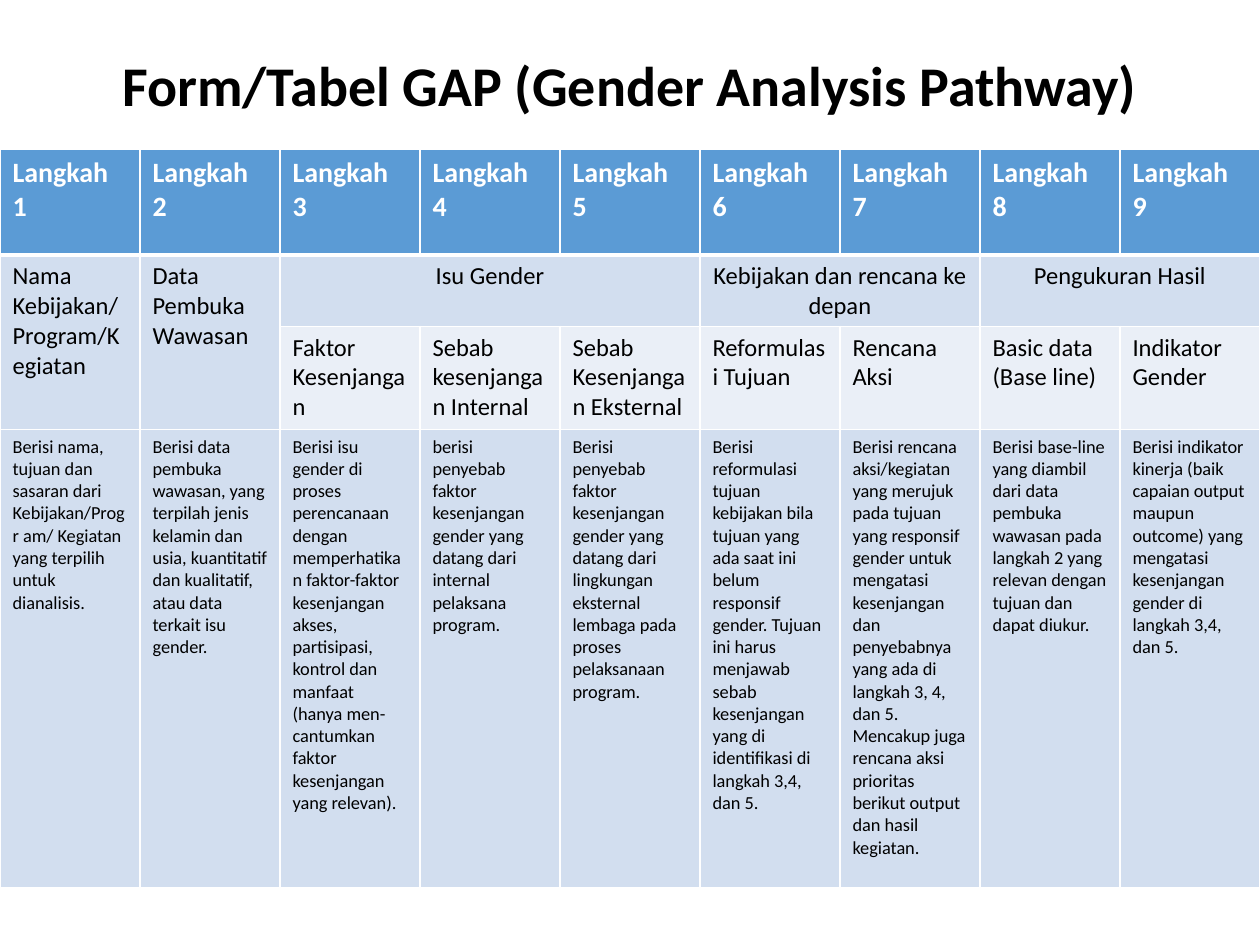
import pptx
import pptx.util
import pptx.dml.color
import pptx.enum.text
import pptx.oxml
import pptx.oxml.ns

RGB = pptx.dml.color.RGBColor
BLACK = RGB(0x00, 0x00, 0x00)
WHITE = RGB(0xFF, 0xFF, 0xFF)
BLUE = RGB(0x5B, 0x9B, 0xD5)
MIST = RGB(0xD2, 0xDE, 0xEF)
PALE = RGB(0xEA, 0xEF, 0xF7)

ALIGN = pptx.enum.text.PP_ALIGN
FONT = "Calibri"
STEPS = 9
ROWS = [106, 71, 103, 458]

# Group label, first column, rows spanned, columns spanned
GROUPS = [
    ("Nama Kebijakan/Program/Kegiatan", 0, 2, 1),
    ("Data Pembuka Wawasan", 1, 2, 1),
    ("Isu Gender", 2, 1, 3),
    ("Kebijakan dan rencana ke depan", 5, 1, 2),
    ("Pengukuran Hasil", 7, 1, 2),
]
PARTS = [
    "Faktor Kesenjangan",
    "Sebab kesenjangan Internal",
    "Sebab Kesenjangan Eksternal",
    "Reformulasi Tujuan",
    "Rencana Aksi",
    "Basic data (Base line)",
    "Indikator Gender",
]
NOTES = [
    ["Berisi nama, tujuan dan sasaran dari Kebijakan/Progr am/ Kegiatan "
     "yang terpilih untuk dianalisis."],
    ["Berisi data pembuka wawasan, yang terpilah jenis kelamin dan usia, "
     "kuantitatif dan kualitatif, atau data terkait isu gender."],
    ["Berisi isu gender di proses perencanaan dengan memperhatikan "
     "faktor-faktor kesenjangan akses, partisipasi, kontrol dan manfaat "
     "(hanya men- cantumkan faktor kesenjangan yang relevan)."],
    ["berisi penyebab faktor kesenjangan gender yang datang dari internal "
     "pelaksana program."],
    ["Berisi penyebab faktor kesenjangan gender yang datang dari lingkungan "
     "eksternal lembaga pada proses pelaksanaan program."],
    ["Berisi reformulasi tujuan kebijakan bila tujuan yang ada saat ini belum "
     "responsif gender. Tujuan ini harus menjawab sebab kesenjangan yang di "
     "identifikasi di langkah 3,4, dan 5."],
    ["Berisi rencana aksi/kegiatan yang merujuk pada tujuan yang responsif "
     "gender untuk mengatasi kesenjangan dan penyebabnya yang ada di "
     "langkah 3, 4, dan 5.",
     "Mencakup juga rencana aksi prioritas berikut output dan hasil kegiatan."],
    ["Berisi base-line yang diambil dari data pembuka wawasan pada langkah 2 "
     "yang relevan dengan tujuan dan dapat diukur."],
    ["Berisi indikator kinerja (baik capaian output maupun outcome) yang "
     "mengatasi kesenjangan gender di langkah 3,4, dan 5."],
]


def px(n):
    return pptx.util.Emu(round(n * 914400 / 126))


def write(frame, lines, size, color=BLACK, bold=False, align=ALIGN.LEFT):
    for i, line in enumerate(lines):
        para = frame.add_paragraph() if i else frame.paragraphs[0]
        para.alignment = align
        run = para.add_run()
        run.text = line
        font = run.font
        font.name, font.size, font.bold = FONT, pptx.util.Pt(size), bold
        font.color.rgb = color


def edge(cell, widths):
    """Draw white borders, given as points for left, right, top, bottom."""
    props = cell._tc.get_or_add_tcPr()
    for i, (side, width) in enumerate(zip("LRTB", widths)):
        line = pptx.oxml.parse_xml(
            f'<a:ln{side} {pptx.oxml.ns.nsdecls("a")} w="{width * 12700}">'
            f'<a:solidFill><a:srgbClr val="{WHITE}"/></a:solidFill></a:ln{side}>')
        props.insert(i, line)


def title(slide, x, y, w, h):
    box = slide.shapes.add_textbox(px(x), px(y), px(w), px(h))
    frame = box.text_frame
    frame.word_wrap = True
    frame.vertical_anchor = pptx.enum.text.MSO_ANCHOR.MIDDLE
    write(frame, ["Form/Tabel GAP (Gender Analysis Pathway)"], 32,
          bold=True, align=ALIGN.CENTER)
    frame.paragraphs[0].line_spacing = 0.9


def matrix(slide, x, y, w, h):
    grid = slide.shapes.add_table(len(ROWS), STEPS, px(x), px(y),
                                  px(w), px(h)).table
    for col in grid.columns:
        col.width = px(w / STEPS)

    # Row heights, fills and borders
    for r, fill in enumerate([BLUE, MIST, PALE, MIST]):
        grid.rows[r].height = px(ROWS[r])
        for c in range(STEPS):
            cell = grid.cell(r, c)
            cell.fill.solid()
            cell.fill.fore_color.rgb = fill
            edge(cell, (1, 1, 3 if r == 1 else 1, 3 if r == 0 else 1))

    # Step headings and descriptions
    for c, note in enumerate(NOTES):
        write(grid.cell(0, c).text_frame, [f"Langkah {c + 1}"], 16, WHITE, True)
        write(grid.cell(3, c).text_frame, note, 10.5)

    # Group labels, then the parts under them
    for text, c, down, across in GROUPS:
        cell = grid.cell(1, c)
        cell.merge(grid.cell(down, c + across - 1))
        write(cell.text_frame, [text], 14,
              align=ALIGN.CENTER if across > 1 else ALIGN.LEFT)
    for c, text in enumerate(PARTS, 2):
        write(grid.cell(2, c).text_frame, [text], 14)


def main():
    deck = pptx.Presentation()
    deck.slide_width, deck.slide_height = px(1260), px(945)
    slide = deck.slides.add_slide(deck.slide_layouts[6])
    title(slide, 87, 50, 1086, 77)
    matrix(slide, 0, 149, 1260, sum(ROWS))
    deck.save("out.pptx")


if __name__ == "__main__":
    main()
